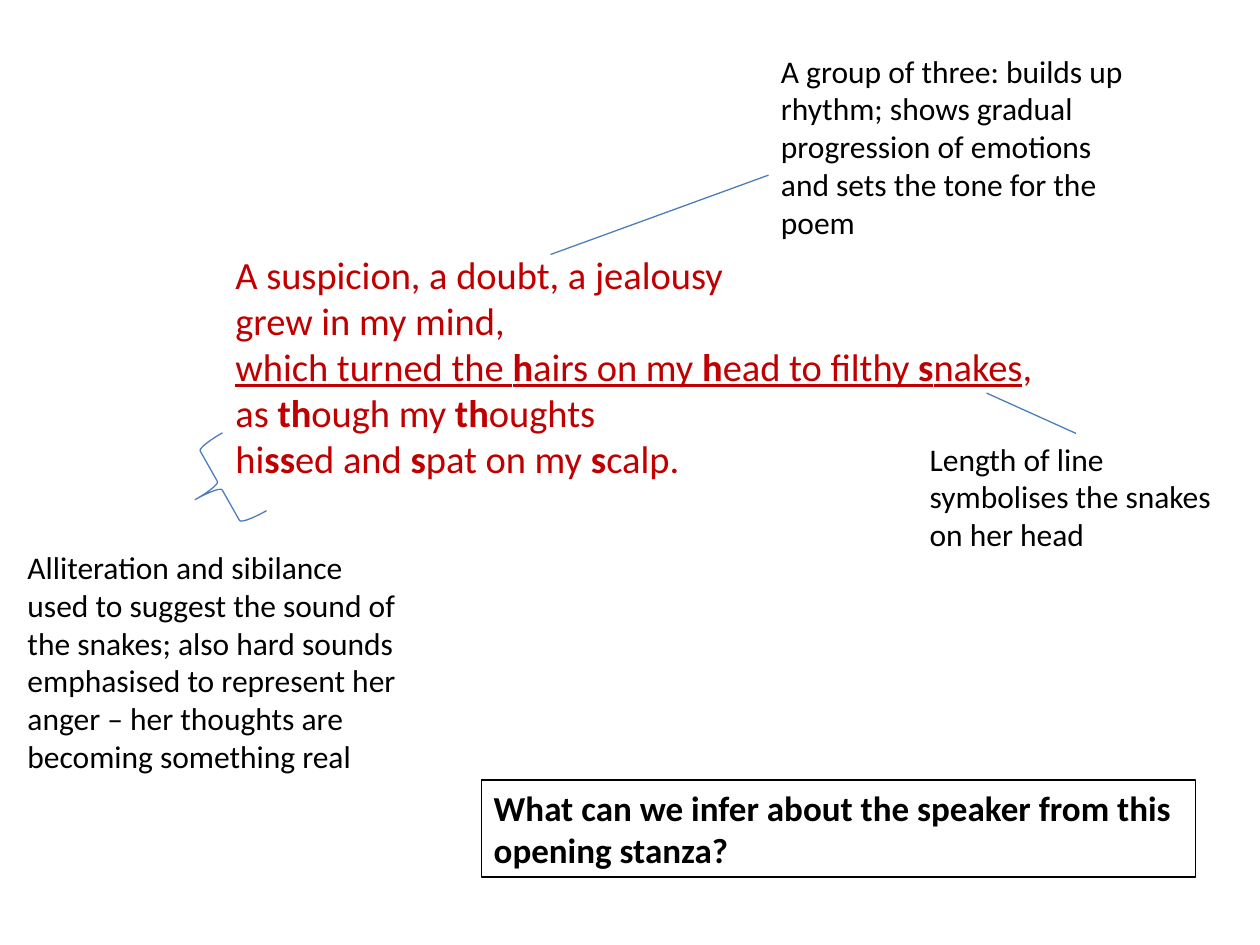
import pptx
import pptx.util
import pptx.dml.color
import pptx.enum.shapes
import pptx.enum.text
import pptx.oxml.ns
import lxml.etree

Inches = pptx.util.Inches
COLORS = {"poem": "C00000", "note": "000000", "pointer": "4B7EBC"}

STANZA = [
    [("A suspicion, a doubt, a jealousy", "")],
    [("grew in my mind,", "")],
    [("which turned the ", "u"), ("h", "bu"), ("airs on my ", "u"), ("h", "bu"),
     ("ead to filthy ", "u"), ("s", "bu"), ("nakes", "u"), (",", "")],
    [("as ", ""), ("th", "b"), ("ough my ", ""), ("th", "b"), ("oughts", "")],
    [("hi", ""), ("ss", "b"), ("ed and ", ""), ("s", "b"), ("pat on my ", ""),
     ("s", "b"), ("calp.", "")],
]


class AnnotatedPage:
    font = "Calibri"
    line_width = pptx.util.Pt(0.75)

    def __init__(self, deck):
        self.page = deck.slides.add_slide(deck.slide_layouts[6])

    def color(self, name):
        return pptx.dml.color.RGBColor.from_string(COLORS[name])

    def outline(self, item, color):
        item.line.color.rgb = self.color(color)
        item.line.width = self.line_width

    def text(self, place, lines, size=18, color="note"):
        box = self.page.shapes.add_textbox(*map(Inches, place))
        frame = box.text_frame
        frame.word_wrap = True
        frame.auto_size = pptx.enum.text.MSO_AUTO_SIZE.SHAPE_TO_FIT_TEXT
        for index, line in enumerate(lines):
            para = frame.add_paragraph() if index else frame.paragraphs[0]
            for words, style in line:
                span = para.add_run()
                span.text = words
                span.font.name = self.font
                span.font.size = pptx.util.Pt(size)
                span.font.color.rgb = self.color(color)
                span.font.bold = "b" in style
                span.font.underline = "u" in style
        return box

    def pointer(self, start, end):
        line = self.page.shapes.add_connector(
            pptx.enum.shapes.MSO_CONNECTOR.STRAIGHT, *map(Inches, start + end))
        self.outline(line, "pointer")
        lxml.etree.SubElement(line._element.spPr, pptx.oxml.ns.qn("a:effectLst"))
        return line

    def brace(self, place, rotation):
        brace = self.page.shapes.add_shape(
            pptx.enum.shapes.MSO_SHAPE.LEFT_BRACE, *map(Inches, place))
        brace.rotation = rotation
        brace.shadow.inherit = False
        brace.fill.background()
        self.outline(brace, "pointer")


def main():
    deck = pptx.Presentation()
    deck.slide_width, deck.slide_height = Inches(10), Inches(7.5)
    page = AnnotatedPage(deck)

    page.text((1.77, 1.94, 6.69, 2.26), STANZA, size=22, color="poem")
    page.pointer((4.37, 2.02), (6.1, 1.39))
    page.text((6.1, 0.36, 3.07, 1.62), [[(
        "A group of three: builds up rhythm; shows gradual progression of "
        "emotions and sets the tone for the poem", "")]])
    length_note = page.text((7.28, 3.44, 2.52, 1.01), [[(
        "Length of line symbolises the snakes on her head", "")]])
    length_pointer = page.pointer((8.54, 3.44), (7.83, 3.12))
    length_pointer.begin_connect(length_note, 0)
    page.brace((1.52, 3.5, 0.45, 0.71), 330.5)
    page.text((0.12, 4.3, 3.23, 1.92), [[(
        "Alliteration and sibilance used to suggest the sound of the snakes; "
        "also hard sounds emphasised to represent her anger – her thoughts "
        "are becoming something real", "")]])
    question = page.text((3.82, 6.19, 5.67, 0.77), [[(
        "What can we infer about the speaker from this opening stanza?", "b")]],
        size=20)
    page.outline(question, "note")

    deck.save("out.pptx")


if __name__ == "__main__":
    main()
